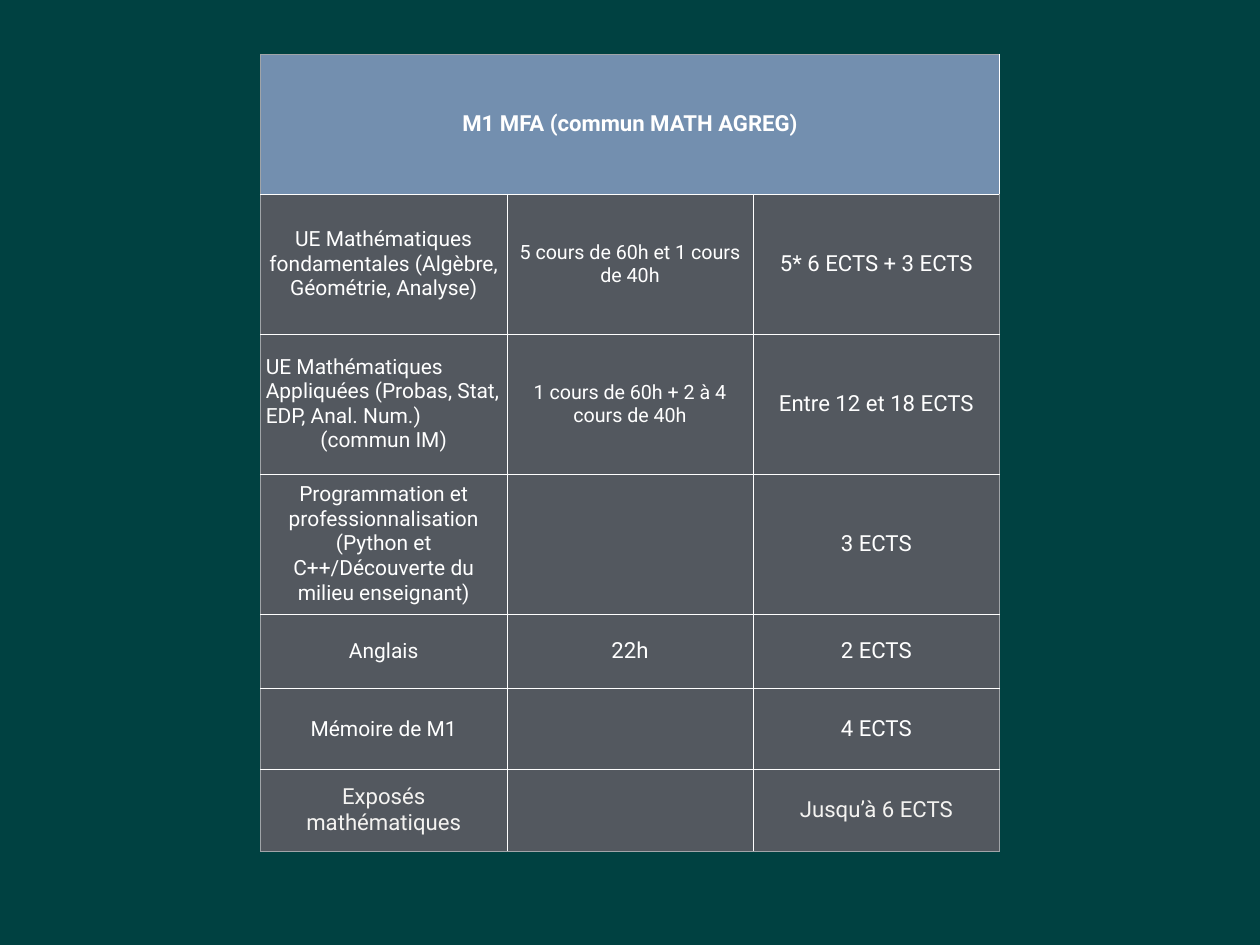
from dataclasses import dataclass

from lxml import etree
from pptx import Presentation
from pptx.dml.color import RGBColor
from pptx.enum import text
from pptx.oxml import ns
from pptx.util import Inches, Pt

HUES = {
    "back": "004141",
    "head": "738FAF",
    "body": "53585F",
    "edge": "A0A4A8",
    "white": "FFFFFF",
    "pale": "F4F3F1",
}
FONT = "Roboto"
MID = text.PP_ALIGN.CENTER
LEFT = text.PP_ALIGN.LEFT
WIDE = 2.78


@dataclass
class Entry:
    words: str = ""
    size: int = 18
    hue: str = "white"
    bold: bool = False
    aligns: tuple = (MID,)


@dataclass
class Row:
    height: float
    cells: tuple
    fill: str = "body"


ROWS = [
    Row(1.58, (Entry("M1 MFA (commun MATH AGREG)", bold=True), Entry(), Entry()), "head"),
    Row(1.58, (Entry("UE Mathématiques fondamentales (Algèbre, Géométrie, Analyse)", 17),
               Entry("5 cours de 60h et 1 cours de 40h", 16),
               Entry("5* 6 ECTS + 3 ECTS"))),
    Row(1.58, (Entry("UE Mathématiques Appliquées (Probas, Stat, EDP, Anal. Num.)\n(commun IM)",
                     17, aligns=(LEFT, MID)),
               Entry("1 cours de 60h + 2 à 4 cours de 40h", 16),
               Entry("Entre 12 et 18 ECTS"))),
    Row(1.58, (Entry("Programmation et professionnalisation (Python et "
                     "C++/Découverte du milieu enseignant)", 17),
               Entry(), Entry("3 ECTS"))),
    Row(0.84, (Entry("Anglais", 17), Entry("22h"), Entry("2 ECTS"))),
    Row(0.92, (Entry("Mémoire de M1", 17), Entry(), Entry("4 ECTS"))),
    Row(0.92, (Entry("Exposés mathématiques", hue="pale"), Entry(),
               Entry("Jusqu’à 6 ECTS", hue="pale"))),
]


def paint(hue: str) -> RGBColor:
    return RGBColor.from_string(HUES[hue])


def border(cell, outer: dict[str, bool]) -> None:
    """Grey on the table's rim, half-clear white between cells."""
    props = cell._tc.get_or_add_tcPr()
    for spot, (side, rim) in enumerate(outer.items()):
        line = etree.Element(ns.qn(f"a:ln{side}"), w=str(Pt(0.25)))
        solid = etree.SubElement(line, ns.qn("a:solidFill"))
        shade = etree.SubElement(solid, ns.qn("a:srgbClr"),
                                 val=HUES["edge" if rim else "white"])
        if not rim:
            etree.SubElement(shade, ns.qn("a:alpha"), val="50000")
        props.insert(spot, line)


def write(cell, entry: Entry) -> None:
    cell.vertical_anchor = text.MSO_ANCHOR.MIDDLE
    cell.margin_left = cell.margin_right = Inches(0.06)
    cell.margin_top = cell.margin_bottom = Inches(0.06)
    if not entry.words:
        return
    cell.text_frame.text = entry.words
    for para, align in zip(cell.text_frame.paragraphs, entry.aligns):
        para.alignment = align
        para.font.name = FONT
        para.font.size = Pt(entry.size)
        para.font.bold = entry.bold
        para.font.color.rgb = paint(entry.hue)


def main() -> None:
    deck = Presentation()
    deck.slide_width, deck.slide_height = Inches(14.22), Inches(10.67)
    slide = deck.slides.add_slide(deck.slide_layouts[6])
    slide.background.fill.solid()
    slide.background.fill.fore_color.rgb = paint("back")

    # Table frame
    tall = sum(row.height for row in ROWS)
    table = slide.shapes.add_table(len(ROWS), 3, Inches(2.94), Inches(0.61),
                                   Inches(3 * WIDE), Inches(tall)).table
    table.first_row = table.horz_banding = False
    for column in table.columns:
        column.width = Inches(WIDE)

    # Cells
    for r, row in enumerate(ROWS):
        table.rows[r].height = Inches(row.height)
        for c, entry in enumerate(row.cells):
            cell = table.cell(r, c)
            write(cell, entry)
            cell.fill.solid()
            cell.fill.fore_color.rgb = paint(row.fill)
            border(cell, {"L": c == 0, "R": c == 2,
                          "T": r == 0, "B": r == len(ROWS) - 1})

    # Title row
    table.cell(0, 0).merge(table.cell(0, 2))
    deck.save("out.pptx")


if __name__ == "__main__":
    main()
